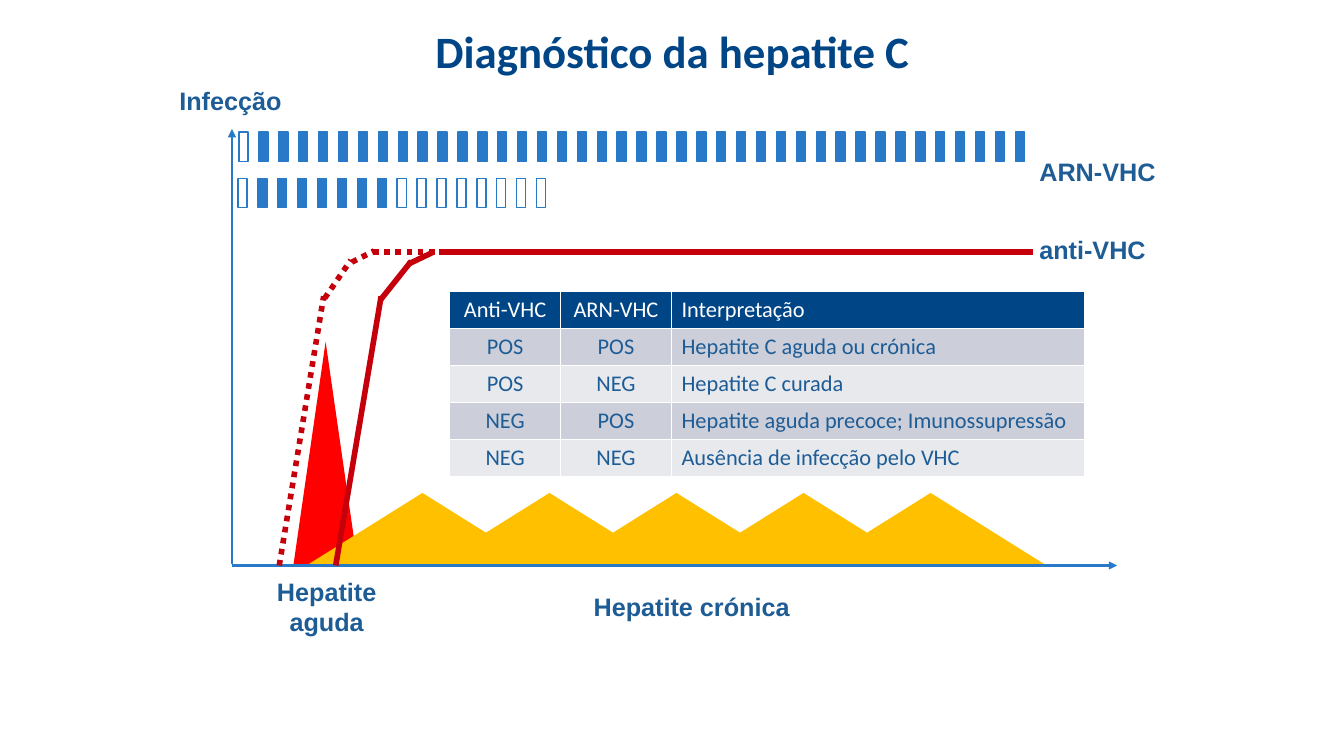
import lxml.etree
import pptx
import pptx.dml.color
import pptx.enum.dml
import pptx.enum.shapes
import pptx.enum.text
import pptx.oxml.ns
import pptx.util

Inches = pptx.util.Inches
Pt = pptx.util.Pt
qn = pptx.oxml.ns.qn
SHAPE = pptx.enum.shapes.MSO_SHAPE
ALIGN = pptx.enum.text.PP_ALIGN
MIDDLE = pptx.enum.text.MSO_ANCHOR.MIDDLE

COLORS = {
    name: pptx.dml.color.RGBColor.from_string(value)
    for name, value in {
        "navy": "004586", "label": "1E5C96", "bar": "287AC8",
        "acute": "FF0000", "chronic": "FFC000", "antibody": "C5000B",
        "white": "FFFFFF", "dark band": "CCCFD9", "light band": "E7E9ED",
    }.items()
}


def add_block(shapes, preset, left, top, width, height, fill=None, outline=None):
    block = shapes.add_shape(preset, Inches(left), Inches(top), Inches(width), Inches(height))
    block.shadow.inherit = False
    if fill:
        block.fill.solid()
        block.fill.fore_color.rgb = COLORS[fill]
    else:
        block.fill.background()
    if outline:
        block.line.color.rgb = COLORS[outline]
        block.line.width = Pt(1)
    else:
        block.line.fill.background()


def add_line(start, end, color, width):
    line = slide.shapes.add_connector(
        pptx.enum.shapes.MSO_CONNECTOR.STRAIGHT, *[Inches(value) for value in start + end])
    line.line.color.rgb = COLORS[color]
    line.line.width = Pt(width)
    lxml.etree.SubElement(line._element.spPr, qn("a:effectLst"))
    return line


presentation = pptx.Presentation()
presentation.slide_width = Inches(13.33)
presentation.slide_height = Inches(7.5)
slide = presentation.slides.add_slide(presentation.slide_layouts[5])

# Title
title = slide.shapes.title
title.left, title.top, title.width, title.height = map(Inches, (0.67, 0.17, 12, 0.66))
title.text_frame.text = "Diagnóstico da hepatite C"
title.text_frame.vertical_anchor = MIDDLE
paragraph = title.text_frame.paragraphs[0]
paragraph.alignment = ALIGN.CENTER
paragraph.font.name = "Calibri"
paragraph.font.size = Pt(32)
paragraph.font.bold = True
paragraph.font.color.rgb = COLORS["navy"]

# Acute peak and chronic waves
peaks = slide.shapes.add_group_shape().shapes
add_block(peaks, SHAPE.ISOSCELES_TRIANGLE, 2.91, 3.39, 0.64, 2.22, "acute")
for wave in range(5):
    add_block(peaks, SHAPE.ISOSCELES_TRIANGLE, 3.04 + 1.26 * wave, 4.89, 2.3, 0.72, "chronic")

# Axes
for start, end in [((2.3, 5.6), (2.3, 1.28)), ((2.3, 5.61), (11.08, 5.61))]:
    axis = add_line(start, end, "bar", 1.5)
    outline = axis.line._get_or_add_ln()
    lxml.etree.SubElement(outline, qn("a:tailEnd"), type="triangle")

# Antibody curves
solid_curve = [
    ((3.33, 5.61), (3.78, 2.94)), ((3.77, 2.98), (4.08, 2.59)),
    ((4.05, 2.62), (4.3, 2.5)), ((4.35, 2.5), (10.25, 2.5)),
]
dotted_curve = [
    ((2.77, 5.61), (3.21, 2.94)), ((3.22, 2.96), (3.48, 2.58)),
    ((3.49, 2.6), (3.71, 2.49)), ((3.7, 2.5), (4.47, 2.5)),
]
for start, end in solid_curve:
    add_line(start, end, "antibody", 4)
for start, end in dotted_curve:
    segment = add_line(start, end, "antibody", 4)
    segment.line.dash_style = pptx.enum.dml.MSO_LINE.ROUND_DOT

# Rows of RNA bars: left, top, number of bars, filled bars
bar_pitch = (10.07 - 2.37) / 39
for left, top, count, filled in [(2.37, 1.31, 40, range(1, 40)), (2.36, 1.77, 16, range(1, 8))]:
    for index in range(count):
        add_block(slide.shapes, SHAPE.RECTANGLE, left + bar_pitch * index, top, 0.09, 0.29,
                  "bar" if index in filled else None, "bar")

# Labels, each a little wider than its longest line
labels = [
    ("Infecção", 1.68, 0.8, 1.31, 0.4, ALIGN.LEFT),
    ("ARN-VHC", 10.21, 1.5, 1.45, 0.4, ALIGN.LEFT),
    ("anti-VHC", 10.21, 2.28, 1.35, 0.4, ALIGN.LEFT),
    ("Hepatite\naguda", 2.6, 5.67, 1.28, 0.7, ALIGN.CENTER),
    ("Hepatite crónica", 5.74, 5.82, 2.24, 0.4, ALIGN.CENTER),
]
for text, left, top, width, height, alignment in labels:
    label = slide.shapes.add_textbox(Inches(left), Inches(top), Inches(width), Inches(height))
    label.text_frame.text = text
    label.text_frame.word_wrap = False
    for paragraph in label.text_frame.paragraphs:
        paragraph.alignment = alignment
        paragraph.font.name = "Arial"
        paragraph.font.size = Pt(18)
        paragraph.font.bold = True
        paragraph.font.color.rgb = COLORS["label"]

# Interpretation table
rows = [
    ("Anti-VHC", "ARN-VHC", "Interpretação"),
    ("POS", "POS", "Hepatite C aguda ou crónica"),
    ("POS", "NEG", "Hepatite C curada"),
    ("NEG", "POS", "Hepatite aguda precoce; Imunossupressão"),
    ("NEG", "NEG", "Ausência de infecção pelo VHC"),
]
table = slide.shapes.add_table(
    len(rows), 3, Inches(4.46), Inches(2.89), Inches(6.3), Inches(1.83)).table
for column, width in zip(table.columns, (1.1, 1.1, 4.1)):
    column.width = Inches(width)
for row_index, row in enumerate(rows):
    is_header = row_index == 0
    band = "navy" if is_header else "dark band" if row_index % 2 else "light band"
    for column_index, text in enumerate(row):
        cell = table.cell(row_index, column_index)
        cell.text = text
        cell.vertical_anchor = MIDDLE
        paragraph = cell.text_frame.paragraphs[0]
        paragraph.alignment = ALIGN.CENTER if column_index < 2 else ALIGN.LEFT
        paragraph.font.name = "Calibri"
        paragraph.font.size = Pt(16)
        paragraph.font.bold = False
        paragraph.font.color.rgb = COLORS["white" if is_header else "label"]
        properties = cell._tc.get_or_add_tcPr()
        for side in ("lnL", "lnR", "lnT", "lnB"):
            border = lxml.etree.SubElement(properties, qn("a:" + side), w=str(Pt(1)))
            border_fill = lxml.etree.SubElement(border, qn("a:solidFill"))
            lxml.etree.SubElement(border_fill, qn("a:srgbClr"), val=str(COLORS["white"]))
        cell.fill.solid()
        cell.fill.fore_color.rgb = COLORS[band]

presentation.save("out.pptx")
